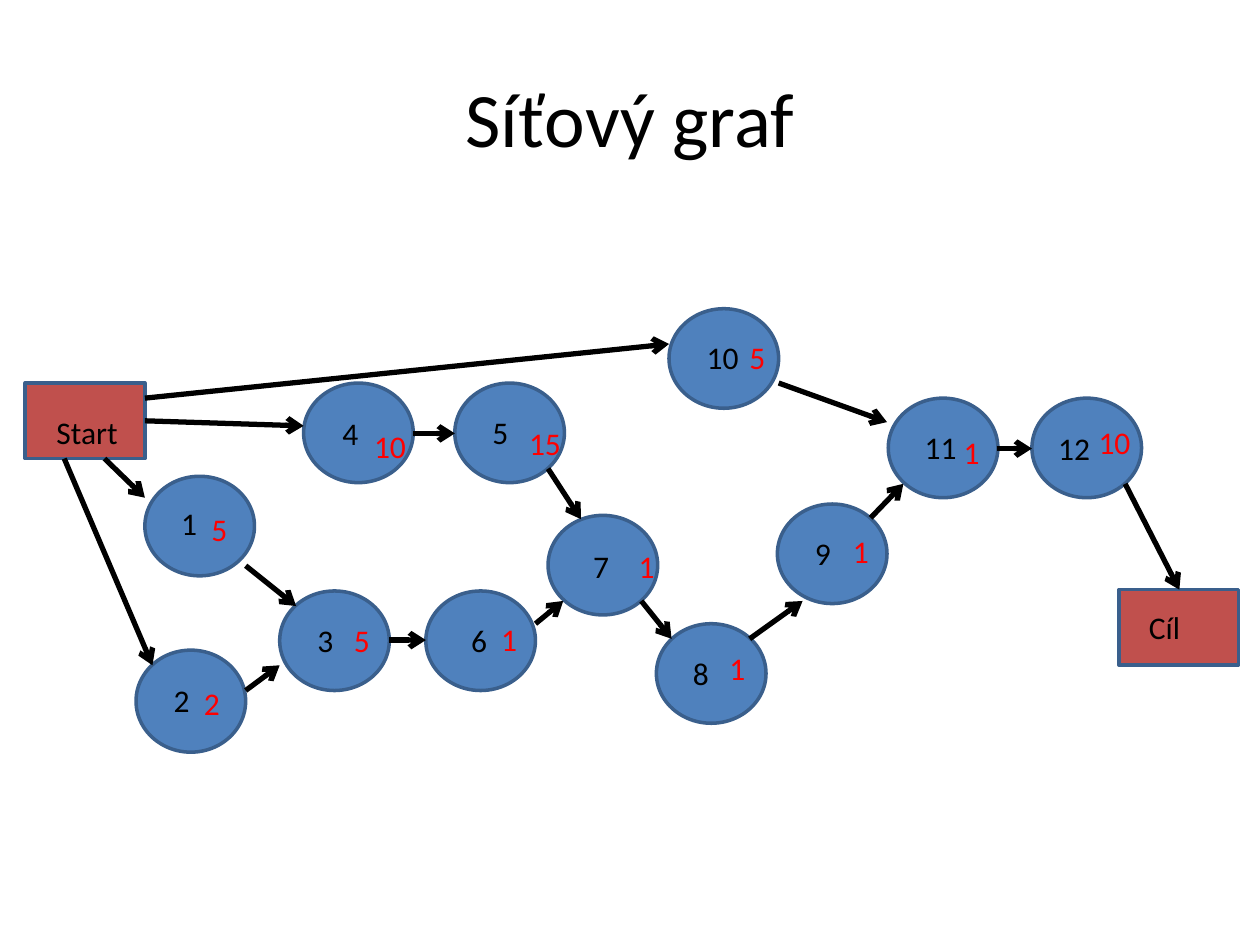
from lxml.etree import SubElement
from pptx import Presentation
from pptx.dml.color import RGBColor as RGB
from pptx.enum.shapes import MSO_CONNECTOR as LINK, MSO_SHAPE as SHAPE
from pptx.enum.text import MSO_ANCHOR as ANCHOR, MSO_AUTO_SIZE as FIT, PP_ALIGN as ALIGN
from pptx.oxml.ns import qn
from pptx.util import Inches, Pt

INK = {"node": "4F81BD", "end": "C0504D", "edge": "3A5F8C", "text": "000000", "cost": "FF0000"}
FONT = "Calibri"
WIDE, HIGH = 0.87, 0.79

# number, left, top, height, number offset, cost, cost offset
NODES = [
    ("1", 1.15, 3.78, HIGH, (0.19, 0.17), "5", (0.43, 0.22)),
    ("2", 1.08, 5.16, 0.81, (0.2, 0.2), "2", (0.44, 0.22)),
    ("3", 2.22, 4.69, HIGH, (0.2, 0.19), "5", (0.49, 0.19)),
    ("4", 2.41, 3.04, HIGH, (0.21, 0.2), "10", (0.46, 0.3)),
    ("5", 3.61, 3.04, HIGH, (0.2, 0.19), "15", (0.49, 0.28)),
    ("6", 3.38, 4.69, HIGH, (0.26, 0.19), "1", (0.5, 0.18)),
    ("7", 4.35, 4.09, HIGH, (0.26, 0.2), "1", (0.62, 0.2)),
    ("8", 5.21, 4.95, HIGH, (0.19, 0.19), "1", (0.48, 0.15)),
    ("9", 6.17, 4, HIGH, (0.2, 0.19), "1", (0.5, 0.17)),
    ("10", 5.31, 2.45, HIGH, (0.2, 0.18), "5", (0.54, 0.18)),
    ("11", 7.05, 3.16, HIGH, (0.19, 0.19), "1", (0.5, 0.23)),
    ("12", 8.19, 3.16, HIGH, (0.11, 0.2), "10", (0.43, 0.15)),
]
ENDS = [("Start", 0.2, 3.04, (0.15, 0.19)), ("Cíl", 8.88, 4.68, (0.14, 0.1))]
LINKS = [
    ((0.83, 3.64), (1.15, 3.95)), ((0.51, 3.64), (1.21, 5.28)),
    ((1.15, 3.34), (2.41, 3.38)), ((1.15, 3.16), (5.31, 2.73)),
    ((1.95, 5.48), (2.22, 5.28)), ((1.95, 4.49), (2.35, 4.81)),
    ((3.28, 3.44), (3.61, 3.44)), ((3.09, 5.08), (3.38, 5.08)),
    ((4.25, 4.95), (4.47, 4.77)), ((4.35, 3.72), (4.61, 4.12)),
    ((5.09, 4.77), (5.33, 5.07)), ((5.95, 5.07), (6.37, 4.77)),
    ((6.18, 3.04), (7.04, 3.35)), ((6.91, 4.11), (7.17, 3.84)),
    ((7.91, 3.56), (8.19, 3.56)), ((8.93, 3.84), (9.36, 4.68)),
]


def add_run(para, text, size, color):
    """Add one styled run to a paragraph."""
    run = para.add_run()
    run.text = text
    run.font.name = FONT
    run.font.size = Pt(size)
    run.font.color.rgb = RGB.from_string(INK[color])


def add_label(slide, text, left, top, width, color="text"):
    """Place a short text box."""
    box = slide.shapes.add_textbox(Inches(left), Inches(top), Inches(width), Inches(0.4))
    frame = box.text_frame
    frame.word_wrap = True
    frame.auto_size = FIT.SHAPE_TO_FIT_TEXT
    add_run(frame.paragraphs[0], text, 18, color)


def add_body(slide, kind, left, top, width, height, color):
    """Draw an outlined shape."""
    body = slide.shapes.add_shape(kind, Inches(left), Inches(top), Inches(width), Inches(height))
    body.shadow.inherit = False
    body.fill.solid()
    body.fill.fore_color.rgb = RGB.from_string(INK[color])
    body.line.color.rgb = RGB.from_string(INK["edge"])
    body.line.width = Pt(2)


def add_node(slide, name, left, top, height, shift, cost, move):
    """Draw a round node with its number and cost."""
    add_body(slide, SHAPE.OVAL, left, top, WIDE, height, "node")
    add_label(slide, name, left + shift[0], top + shift[1], 0.47)
    width = 0.37 if len(cost) == 1 else 0.51
    add_label(slide, cost, left + move[0], top + move[1], width, "cost")


def add_end(slide, name, left, top, shift):
    """Draw a start or finish box with its name."""
    add_body(slide, SHAPE.RECTANGLE, left, top, 0.95, 0.6, "end")
    add_label(slide, name, left + shift[0], top + shift[1], 0.73)


def add_arrow(slide, start, end):
    """Draw an arrow between two points."""
    ends = [Inches(value) for value in start + end]
    arrow = slide.shapes.add_connector(LINK.STRAIGHT, *ends)
    arrow.line.color.rgb = RGB.from_string(INK["text"])
    arrow.line.width = Pt(3)
    SubElement(arrow.line._get_or_add_ln(), qn("a:tailEnd"), type="arrow")
    SubElement(arrow._element.spPr, qn("a:effectLst"))


def add_title(slide, text):
    """Place and format the slide title."""
    title = slide.shapes.title
    title.left, title.top = Inches(0.5), Inches(0.3)
    title.width, title.height = Inches(9), Inches(1.25)
    frame = title.text_frame
    frame.vertical_anchor = ANCHOR.MIDDLE
    para = frame.paragraphs[0]
    para.alignment = ALIGN.CENTER
    add_run(para, text, 44, "text")


def main():
    """Build the network graph slide."""
    deck = Presentation()
    deck.slide_width, deck.slide_height = Inches(10), Inches(7.5)
    slide = deck.slides.add_slide(deck.slide_layouts[5])
    add_title(slide, "Síťový graf")
    for node in NODES:
        add_node(slide, *node)
    for end in ENDS:
        add_end(slide, *end)
    for link in LINKS:
        add_arrow(slide, *link)
    deck.save("out.pptx")


if __name__ == "__main__":
    main()
